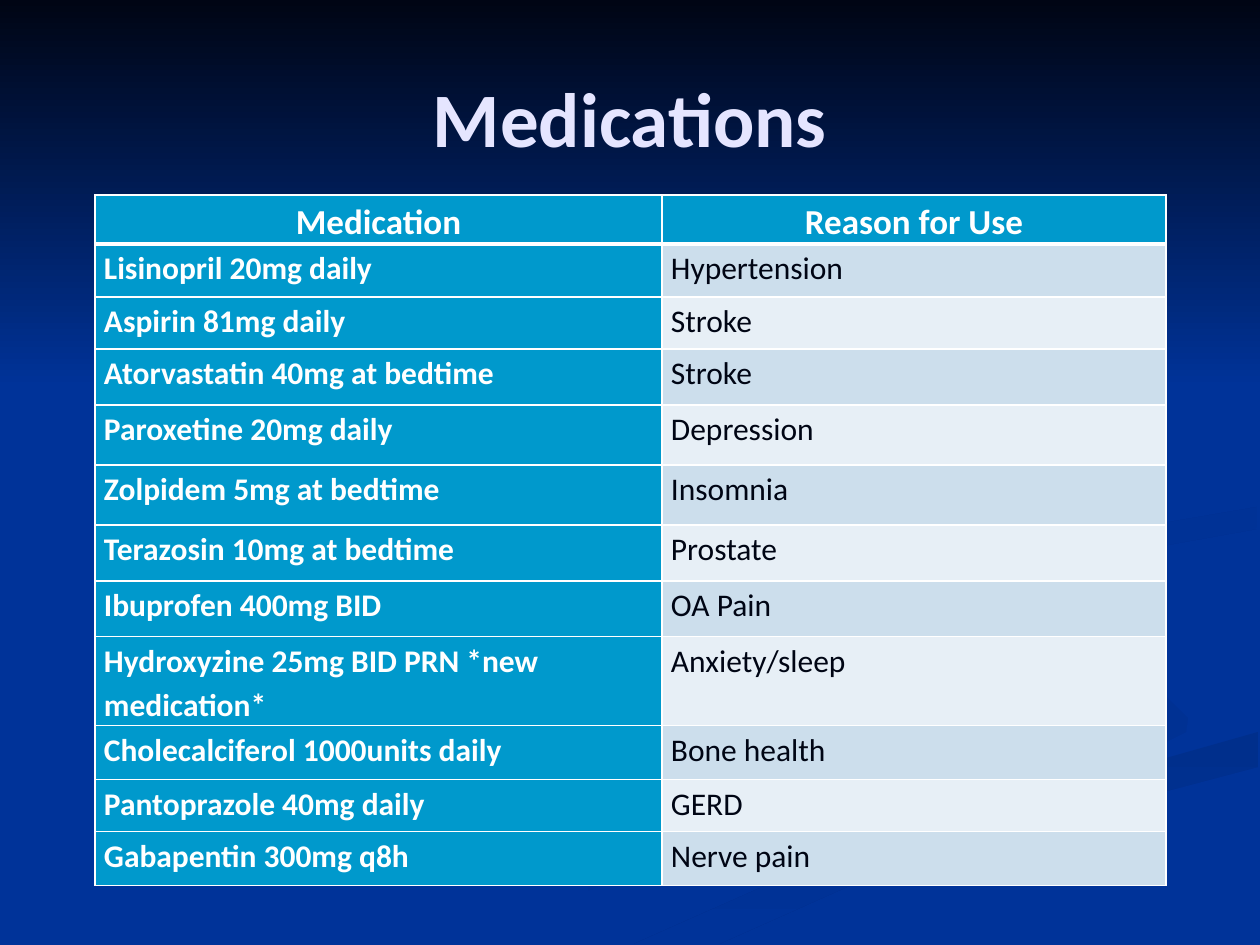
"""Build the Medications slide: a table of drugs and reasons on a swirled blue background."""
from lxml import etree
from pptx import Presentation
from pptx.dml.color import RGBColor
from pptx.enum.shapes import MSO_SHAPE
from pptx.enum.text import MSO_ANCHOR, PP_ALIGN
from pptx.oxml.ns import qn
from pptx.util import Pt

RECTANGLE = MSO_SHAPE.RECTANGLE
MIDDLE = MSO_ANCHOR.MIDDLE
LEFT, CENTER = PP_ALIGN.LEFT, PP_ALIGN.CENTER
PX = 914400 / 126

THEME = {
    "font": "Calibri",
    "background": "003399", "night": "000514",
    "title": "E5E5FF", "white": "FFFFFF", "accent": "0099CC",
    "bands": ("CCDEEC", "E7EFF6"),
    "swirl_tail": "003193", "swirl_band": "002F8C",
    "swirl_edge": "003091", "swirl_top": "002F8E",
    "title_size": 44, "header_size": 20, "body_size": 18,
    "border": 1, "header_border": 3,
}


def px(length):
    return round(length * PX)


def write_text(frame, text, size, color, bold=False, align=LEFT, spacing=1.0):
    frame.word_wrap = True
    paragraph = frame.paragraphs[0]
    paragraph.alignment = align
    paragraph.line_spacing = spacing
    run = paragraph.add_run()
    run.text = text
    run.font.name = THEME["font"]
    run.font.size = Pt(size)
    run.font.bold = bold
    run.font.color.rgb = RGBColor.from_string(color)


presentation = Presentation()
presentation.slide_width, presentation.slide_height = px(1260), px(945)
slide = presentation.slides.add_slide(presentation.slide_layouts[6])
slide.background.fill.solid()
slide.background.fill.fore_color.rgb = RGBColor.from_string(THEME["background"])

SWIRLS = [
    ("background", "swirl_tail", 0, [
        (984, 697), (774, 625), (724, 578), (770, 629), (978, 697), (944, 748),
        (629, 833), (378, 944), (455, 944), (748, 827), (990, 757), (1008, 732)]),
    ("background", "swirl_tail", 45, [
        (1188, 718), (1158, 689), (975, 634), (912, 585), (965, 645), (1124, 697),
        (1157, 732), (1126, 762), (1186, 732)]),
    ("swirl_band", "background", 90, [
        (634, 944), (719, 944), (910, 859), (1258, 767), (1258, 732), (1004, 804),
        (794, 873)]),
    ("swirl_edge", "background", 45, [
        (984, 580), (1041, 625), (1014, 595), (1062, 564), (1257, 529), (1257, 507),
        (1052, 542)]),
    ("swirl_top", "background", 45, [
        (861, 542), (1040, 507), (1126, 433), (1089, 367), (960, 294), (1066, 352),
        (1120, 422), (1074, 471), (788, 537), (727, 582), (784, 630), (747, 592)]),
]

backdrop = []
for start, end, angle, points in SWIRLS:
    builder = slide.shapes.build_freeform(*points[0], scale=PX)
    builder.add_line_segments(points[1:], close=True)
    backdrop.append((builder.convert_to_shape(), start, end, angle))
sky = slide.shapes.add_shape(RECTANGLE, 0, 0, px(1260), px(388))
backdrop.append((sky, "night", "background", 90))

for shape, start, end, angle in backdrop:
    shape.shadow.inherit = False
    shape.line.fill.background()
    shape.fill.gradient()
    shape.fill.gradient_angle = (360 - angle) % 360
    for stop, name in zip(shape.fill.gradient_stops, (start, end)):
        stop.color.rgb = RGBColor.from_string(THEME[name])

title = slide.shapes.add_textbox(px(63), px(38), px(1134), px(157))
title.text_frame.vertical_anchor = MIDDLE
write_text(title.text_frame, "Medications", THEME["title_size"], THEME["title"],
           bold=True, align=CENTER)

ROWS = [
    (49, "Medication", "Reason for Use"),
    (53, "Lisinopril 20mg daily", "Hypertension"),
    (52, "Aspirin 81mg daily", "Stroke"),
    (56, "Atorvastatin 40mg at bedtime", "Stroke"),
    (60, "Paroxetine 20mg daily", "Depression"),
    (60, "Zolpidem 5mg at bedtime", "Insomnia"),
    (56, "Terazosin 10mg at bedtime", "Prostate"),
    (56, "Ibuprofen 400mg BID", "OA Pain"),
    (89, "Hydroxyzine 25mg BID PRN *new medication*", "Anxiety/sleep"),
    (54, "Cholecalciferol 1000units daily", "Bone health"),
    (52, "Pantoprazole 40mg daily", "GERD"),
    (54, "Gabapentin 300mg q8h", "Nerve pain"),
]
COLUMN_WIDTHS = (567, 504)

table = slide.shapes.add_table(
    len(ROWS), len(COLUMN_WIDTHS), px(95), px(195),
    px(sum(COLUMN_WIDTHS)), px(sum(row[0] for row in ROWS))).table
for column, width in zip(table.columns, COLUMN_WIDTHS):
    column.width = px(width)

for row_index, (height, *texts) in enumerate(ROWS):
    table.rows[row_index].height = px(height)
    is_header = row_index == 0
    for column_index, text in enumerate(texts):
        cell = table.cell(row_index, column_index)
        is_accent = is_header or column_index == 0
        cell.margin_left = cell.margin_right = px(9)
        cell.margin_top = cell.margin_bottom = 0
        fill = THEME["accent"] if is_accent else THEME["bands"][(row_index - 1) % 2]
        cell.fill.solid()
        cell.fill.fore_color.rgb = RGBColor.from_string(fill)
        write_text(cell.text_frame, text,
                   THEME["header_size" if is_header else "body_size"],
                   THEME["white" if is_accent else "night"],
                   bold=is_accent, align=CENTER if is_header else LEFT, spacing=1.15)
        properties = cell._tc.get_or_add_tcPr()
        for position, side in enumerate(("lnL", "lnR", "lnT", "lnB")):
            is_thick = (row_index, side) in ((0, "lnB"), (1, "lnT"))
            weight = THEME["header_border" if is_thick else "border"]
            border = etree.Element(qn(f"a:{side}"), w=str(Pt(weight)))
            solid = etree.SubElement(border, qn("a:solidFill"))
            etree.SubElement(solid, qn("a:srgbClr"), val=THEME["white"])
            properties.insert(position, border)

presentation.save("out.pptx")
